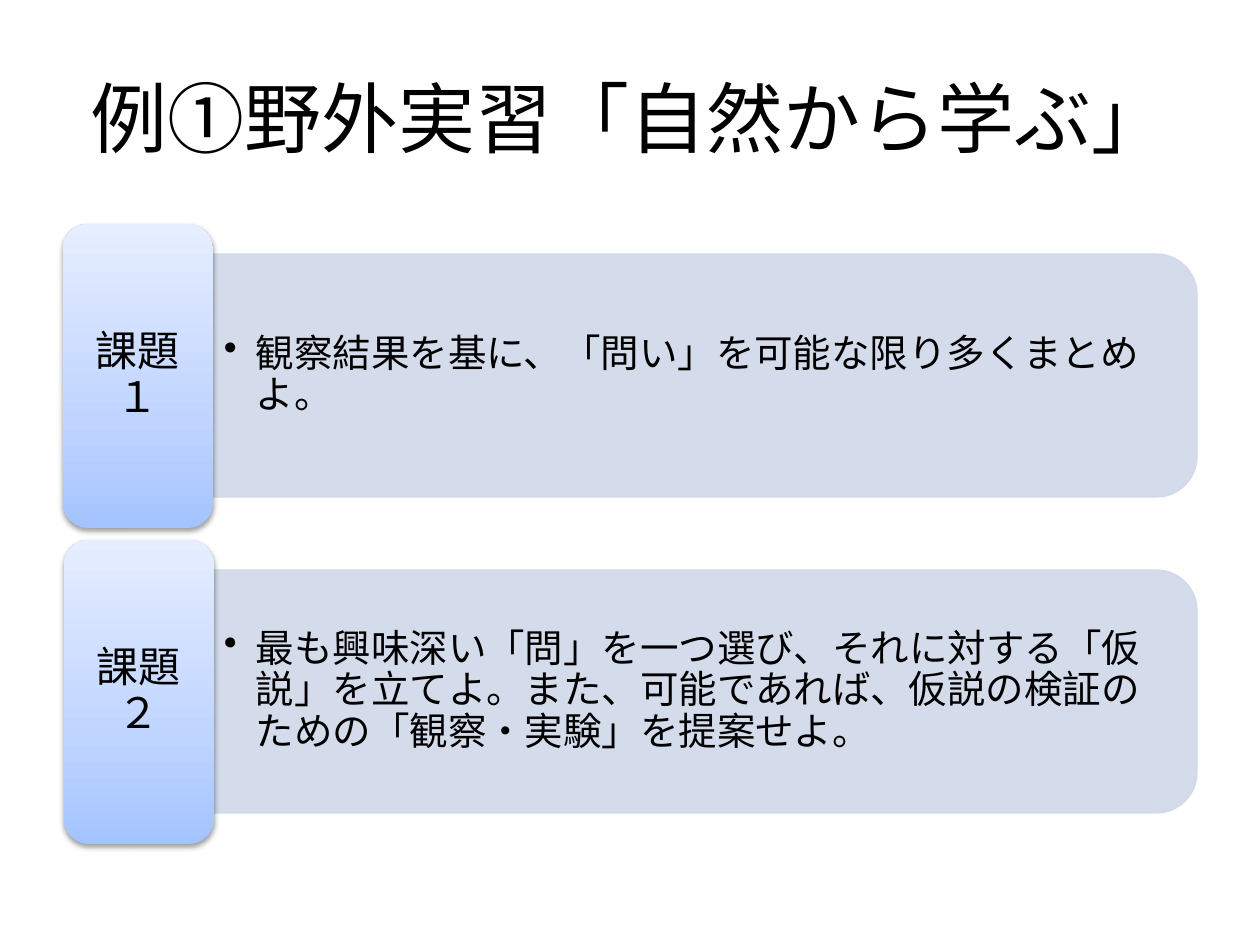
from lxml.etree import SubElement
from pptx import Presentation
from pptx.dml.color import RGBColor
from pptx.enum.shapes import MSO_SHAPE
from pptx.enum.text import MSO_ANCHOR, PP_ALIGN
from pptx.oxml.ns import qn
from pptx.util import Emu, Pt

TASKS = [
    ("課題１", "観察結果を基に、「問い」を可能な限り多くまとめよ。"),
    ("課題２", "最も興味深い「問」を一つ選び、それに対する「仮説」を立てよ。"
               "また、可能であれば、仮説の検証のための「観察・実験」を提案せよ。"),
]
ROW_PITCH = 316


def px(length):
    return Emu(round(length * 914400 / 126))


def color(value):
    return RGBColor.from_string(value)


def apply(target, values):
    for name, value in values.items():
        setattr(target, name, value)


def add_xml(parent, tag, **attributes):
    return SubElement(parent, qn(tag), {k: str(v) for k, v in attributes.items()})


class SlideBuilder:
    font = "Roboto"
    ink = "000000"
    panel_fill = "D0D8E8"
    gradient = [(0, "A4C4FF"), (35000, "BFD4FF"), (100000, "E6EEFF")]

    def __init__(self, slide):
        self.slide = slide

    def text(self, frame_px, words, size, align=PP_ALIGN.LEFT, spacing=1.0, bullet=False):
        box = self.slide.shapes.add_textbox(*map(px, frame_px))
        apply(box.text_frame, {"word_wrap": True, "vertical_anchor": MSO_ANCHOR.MIDDLE})
        para = box.text_frame.paragraphs[0]
        apply(para, {"alignment": align, "line_spacing": spacing})
        span = para.add_run()
        span.text = words
        apply(span.font, {"name": self.font, "size": Pt(size)})
        span.font.color.rgb = color(self.ink)
        add_xml(span.font._element, "a:ea", typeface=self.font)
        if bullet:
            apply(box.text_frame, {"margin_left": px(11), "margin_right": px(11)})
            props = para._p.get_or_add_pPr()
            props.set("marL", str(px(32)))
            props.set("indent", str(-px(32)))
            add_xml(props, "a:buChar", char="•")

    def panel(self, left, top, width, height):
        # The rounded top edge is turned to face right
        x, y = left + (width - height) / 2, top + (height - width) / 2
        panel = self.slide.shapes.add_shape(
            MSO_SHAPE.ROUND_2_SAME_RECTANGLE, px(x), px(y), px(height), px(width))
        panel.rotation = 90
        panel.shadow.inherit = False
        panel.line.width = Pt(0.75)
        for fill in (panel.fill, panel.line.fill):
            fill.solid()
            fill.fore_color.rgb = color(self.panel_fill)
        for value in panel._element.spPr.iter(qn("a:srgbClr")):
            add_xml(value, "a:alpha", val=90000)

    def tab(self, left, top, width, height):
        tab = self.slide.shapes.add_shape(
            MSO_SHAPE.ROUNDED_RECTANGLE, *map(px, (left, top, width, height)))
        tab.line.fill.background()
        tab.shadow.inherit = False
        props = tab._element.spPr
        # Gradient from bottom to top
        fill = add_xml(props, "a:gradFill", rotWithShape=1)
        stops = add_xml(fill, "a:gsLst")
        for position, value in self.gradient:
            add_xml(add_xml(stops, "a:gs", pos=position), "a:srgbClr", val=value)
        add_xml(fill, "a:lin", ang=270 * 60000, scaled=0)
        props.find(qn("a:ln")).addprevious(fill)
        # Soft shadow below
        shadow = add_xml(props.find(qn("a:effectLst")), "a:outerShdw", blurRad=Pt(3.1),
                         dist=Pt(1.6), dir=90 * 60000, rotWithShape=0)
        add_xml(add_xml(shadow, "a:srgbClr", val=self.ink), "a:alpha", val=38000)


def main():
    deck = Presentation()
    apply(deck, {"slide_width": px(1260), "slide_height": px(945)})
    builder = SlideBuilder(deck.slides.add_slide(deck.slide_layouts[6]))

    # Title
    builder.text((63, 38, 1134, 157), "例①野外実習「自然から学ぶ」", 44, PP_ALIGN.CENTER)

    # Task rows
    for row, (label, task) in enumerate(TASKS):
        top = 224 + row * ROW_PITCH
        left = 63 + row
        builder.panel(213, top + 30, 984, 243)
        builder.text((213, top + 42, 971, 219), task, 22, spacing=0.9, bullet=True)
        builder.tab(left, top, 150, 304)
        builder.text((left + 7, top + 7, 135, 290), label, 24, PP_ALIGN.CENTER, 0.9)

    deck.save("out.pptx")


if __name__ == "__main__":
    main()
